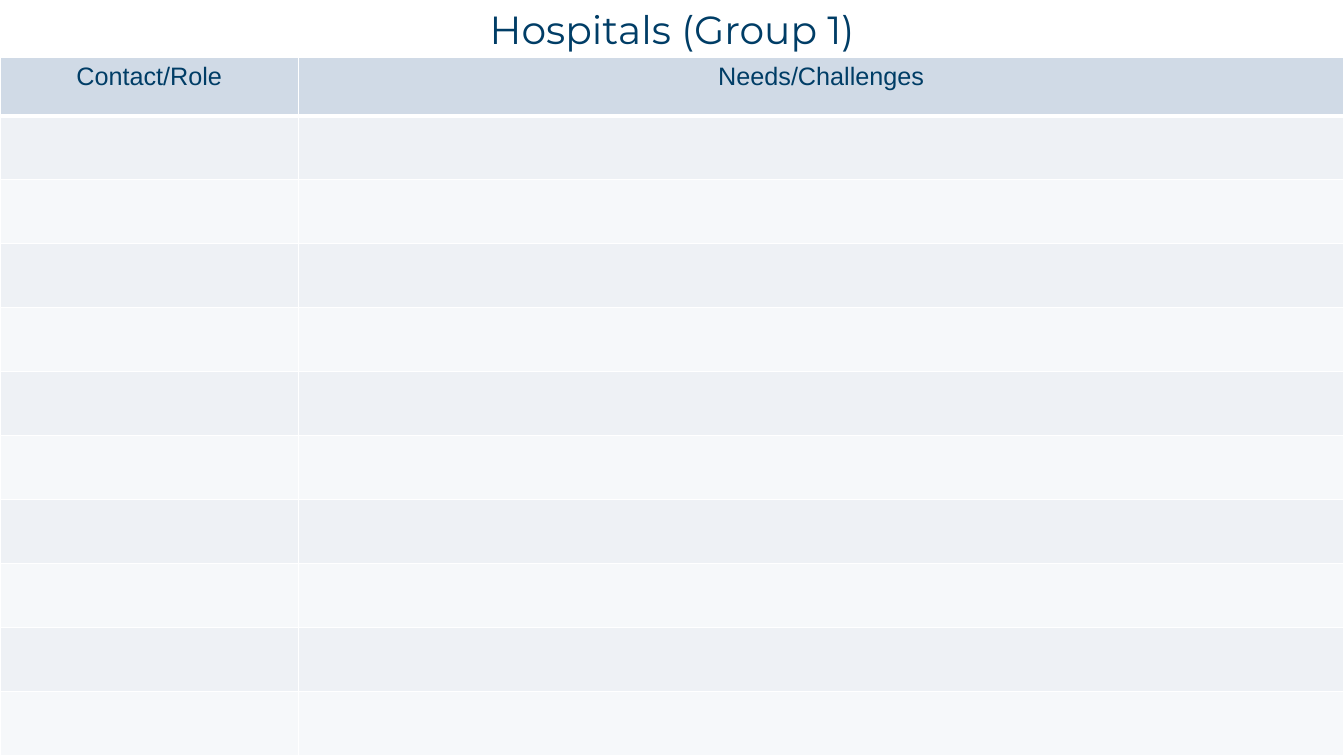
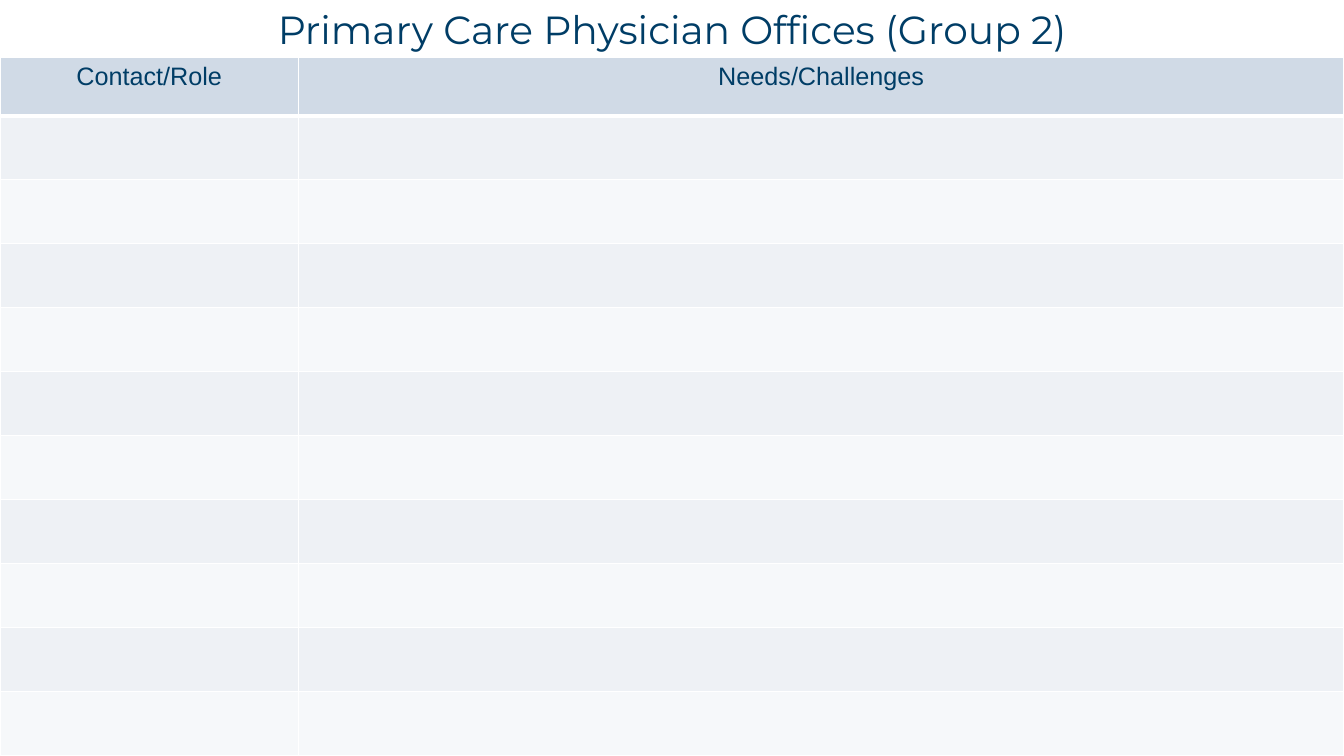
"""Build two contact and needs worksheets, one for each group."""
from pptx import Presentation
from pptx.dml.color import RGBColor
from pptx.enum.text import PP_ALIGN
from pptx.oxml import parse_xml
from pptx.oxml.ns import nsdecls
from pptx.util import Inches, Pt

NAVY = RGBColor(0x00, 0x3D, 0x66)
WHITE = RGBColor(0xFF, 0xFF, 0xFF)
HEADER = RGBColor(0xD0, 0xDA, 0xE6)
BANDS = [RGBColor(0xF6, 0xF8, 0xFA), RGBColor(0xEE, 0xF1, 0xF5)]

HEADINGS = ["Contact/Role", "Needs/Challenges"]
GROUPS = [
    ("Hospitals (Group 1)", 4.35),
    ("Primary Care Physician Offices (Group 2)", 9.01),
]
BODY_ROWS = 10


def style_text(p, text, font, size):
    p.text = text
    p.alignment = PP_ALIGN.CENTER
    r = p.runs[0]
    r.font.name = font
    r.font.size = Pt(size)
    r.font.bold = False
    r.font.color.rgb = NAVY


def set_borders(cell, **widths):
    tcPr = cell._tc.get_or_add_tcPr()
    for i, side in enumerate("LRTB"):
        tcPr.insert(i, parse_xml(
            f'<a:ln{side} {nsdecls("a")} w="{Pt(widths.get(side, 1))}">'
            f'<a:solidFill><a:srgbClr val="{WHITE}"/></a:solidFill></a:ln{side}>'))


prs = Presentation()
prs.slide_width, prs.slide_height = Inches(13.33), Inches(7.5)
W, H = prs.slide_width, prs.slide_height
table_top, header_height = Inches(0.57), Inches(0.58)
row_height = (H - table_top - header_height) // BODY_ROWS
role_width = Inches(2.96)

for title, title_width in GROUPS:
    s = prs.slides.add_slide(prs.slide_layouts[6])

    width = Inches(title_width)
    sp = s.shapes.add_textbox((W - width) // 2, 0, width, Inches(0.88))
    tf = sp.text_frame
    tf.word_wrap = True
    style_text(tf.paragraphs[0], title, "Montserrat", 28)

    table = s.shapes.add_table(BODY_ROWS + 1, len(HEADINGS), 0, table_top, W, H - table_top).table
    table.horz_banding = False
    table.columns[0].width = role_width
    table.columns[1].width = W - role_width

    for i, row in enumerate(table.rows):
        row.height = row_height if i else header_height
        for cell in row.cells:
            cell.fill.solid()
            cell.fill.fore_color.rgb = BANDS[i % 2] if i else HEADER
            set_borders(cell, T=3 if i == 1 else 1, B=1 if i else 3)

    for cell, heading in zip(table.rows[0].cells, HEADINGS):
        style_text(cell.text_frame.paragraphs[0], heading, "Arial", 18)

prs.save("out.pptx")
